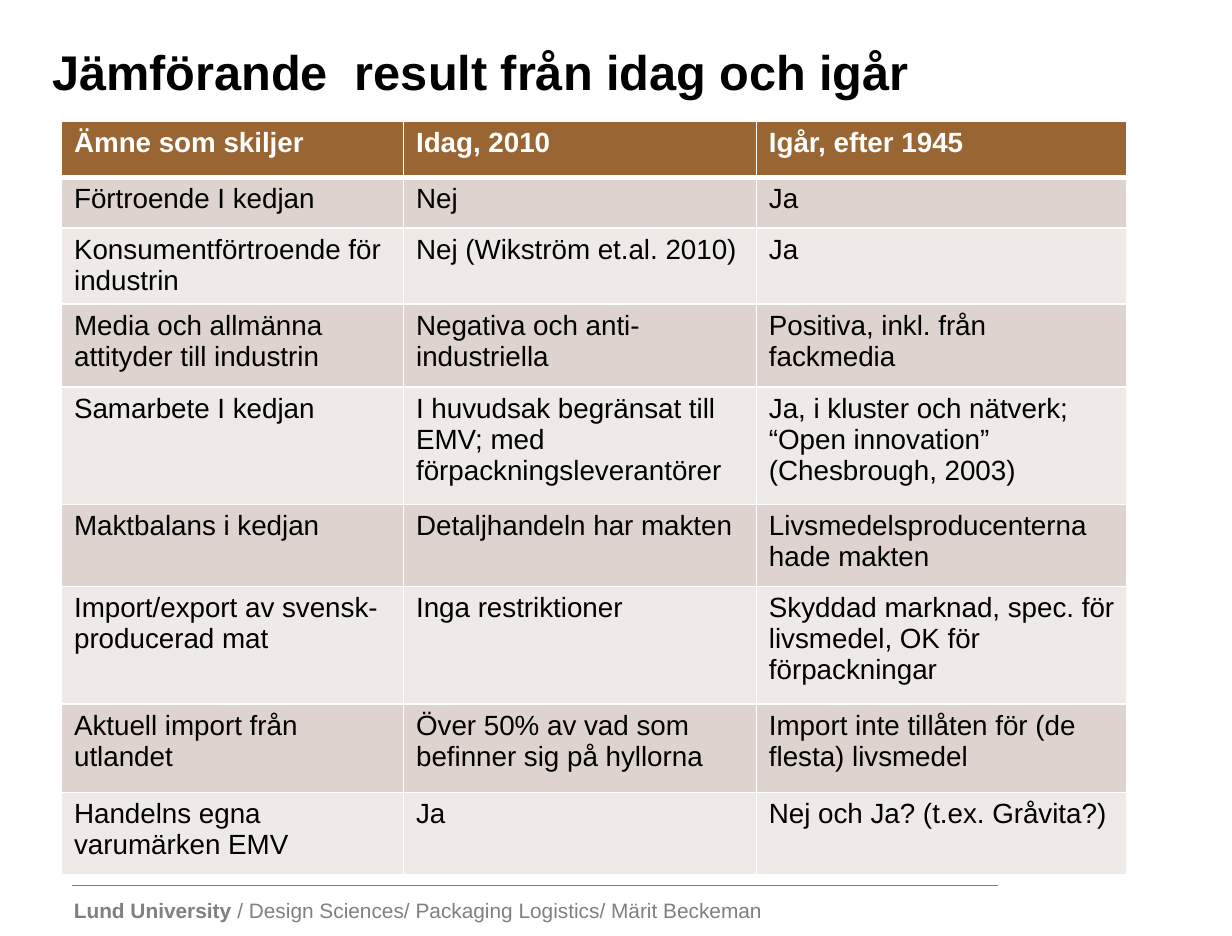
import pptx
import pptx.util
import pptx.dml.color
import pptx.enum.shapes
import pptx.enum.text
from lxml import etree
from pptx.util import Cm, Pt

COLORS = {
    "title": "000000",
    "text": "000000",
    "header": "996633",
    "header_text": "FFFFFF",
    "band_dark": "DED3CE",
    "band_light": "EFEAE8",
    "border": "FFFFFF",
    "footer": "808080",
}
FONT = "Arial"
NS = "http://schemas.openxmlformats.org/drawingml/2006/main"
COL_WIDTHS = [6.94, 7.16, 7.52]
ROW_HEIGHTS = [1.14, 1.03, 1.54, 1.69, 2.38, 1.67, 2.38, 1.8, 1.67]
ROWS = [
    ("Ämne som skiljer", "Idag, 2010", "Igår, efter 1945"),
    ("Förtroende I kedjan", "Nej", "Ja"),
    ("Konsumentförtroende för industrin", "Nej (Wikström et.al. 2010)", "Ja"),
    ("Media och allmänna attityder till industrin", "Negativa och anti- industriella",
     "Positiva, inkl. från fackmedia"),
    ("Samarbete I kedjan", "I huvudsak begränsat till EMV; med förpackningsleverantörer",
     "Ja, i kluster och nätverk; “Open innovation” (Chesbrough, 2003)"),
    ("Maktbalans i kedjan", "Detaljhandeln har makten", "Livsmedelsproducenterna hade makten"),
    ("Import/export av svensk-producerad mat", "Inga restriktioner",
     "Skyddad marknad, spec. för livsmedel, OK för förpackningar"),
    ("Aktuell import från utlandet", "Över 50% av vad som befinner sig på hyllorna",
     "Import inte tillåten för (de flesta) livsmedel"),
    ("Handelns egna varumärken EMV", "Ja", "Nej och Ja? (t.ex. Gråvita?)"),
]


def rgb(name):
    return pptx.dml.color.RGBColor.from_string(COLORS[name])


def set_font(font, size, color, bold=None):
    font.name = FONT
    font.size = Pt(size)
    font.color.rgb = rgb(color)
    font.bold = bold


def set_borders(cell, widths):
    tcPr = cell._tc.get_or_add_tcPr()
    for side, width in zip("LRTB", widths):
        ln = etree.SubElement(tcPr, f"{{{NS}}}ln{side}", w=str(Pt(width)))
        fill = etree.SubElement(ln, f"{{{NS}}}solidFill")
        etree.SubElement(fill, f"{{{NS}}}srgbClr", val=COLORS["border"])


def add_title(s, left, top, width, height):
    sp = s.shapes.title
    sp.left, sp.top, sp.width, sp.height = left, top, width, height
    tf = sp.text_frame
    tf.text = "Jämförande  result från idag och igår"
    tf.auto_size = pptx.enum.text.MSO_AUTO_SIZE.NONE
    tf.vertical_anchor = pptx.enum.text.MSO_ANCHOR.MIDDLE
    p = tf.paragraphs[0]
    p.alignment = pptx.enum.text.PP_ALIGN.LEFT
    set_font(p.font, 28, "title", True)


def add_comparison(s, left, top):
    tbl = s.shapes.add_table(len(ROWS), len(COL_WIDTHS), left, top,
                             Cm(sum(COL_WIDTHS)), Cm(sum(ROW_HEIGHTS))).table
    for column, width in zip(tbl.columns, COL_WIDTHS):
        column.width = Cm(width)
    for i, (row, height, texts) in enumerate(zip(tbl.rows, ROW_HEIGHTS, ROWS)):
        row.height = Cm(height)
        header = i == 0
        band = "header" if header else "band_dark" if i % 2 else "band_light"
        for cell, text in zip(row.cells, texts):
            set_borders(cell, (1, 1, 3 if i == 1 else 1, 3 if header else 1))
            cell.margin_bottom = Cm(0.05)
            cell.fill.solid()
            cell.fill.fore_color.rgb = rgb(band)
            cell.text = text
            set_font(cell.text_frame.paragraphs[0].font, 16,
                     "header_text" if header else "text", header)


def add_footer(s, left, top, width, height):
    rule_left, rule_top = left + Cm(0.22), top - Cm(0.13)
    rule = s.shapes.add_connector(pptx.enum.shapes.MSO_CONNECTOR.STRAIGHT,
                                  rule_left, rule_top, rule_left + Cm(18.79), rule_top)
    rule.line.color.rgb = rgb("footer")
    rule.line.width = Pt(0.5)
    etree.SubElement(rule._element.spPr, f"{{{NS}}}effectLst")

    tf = s.shapes.add_textbox(left, top, width, height).text_frame
    tf.word_wrap = False
    tf.auto_size = pptx.enum.text.MSO_AUTO_SIZE.SHAPE_TO_FIT_TEXT
    p = tf.paragraphs[0]
    set_font(p.font, 12, "footer")
    for text, bold in (("Lund University ", True),
                       ("/ Design Sciences/ Packaging Logistics/ Märit Beckeman", False)):
        r = p.add_run()
        r.text = text
        r.font.bold = bold


def main():
    prs = pptx.Presentation()
    prs.slide_width, prs.slide_height = Cm(25), Cm(19)
    s = prs.slides.add_slide(prs.slide_layouts[5])
    add_footer(s, Cm(1.25), Cm(18.1), Cm(14.6), Cm(0.76))
    add_title(s, Cm(0.81), Cm(0.94), Cm(23.8), Cm(0.99))
    add_comparison(s, Cm(1.25), Cm(2.46))
    prs.save("out.pptx")


if __name__ == "__main__":
    main()
